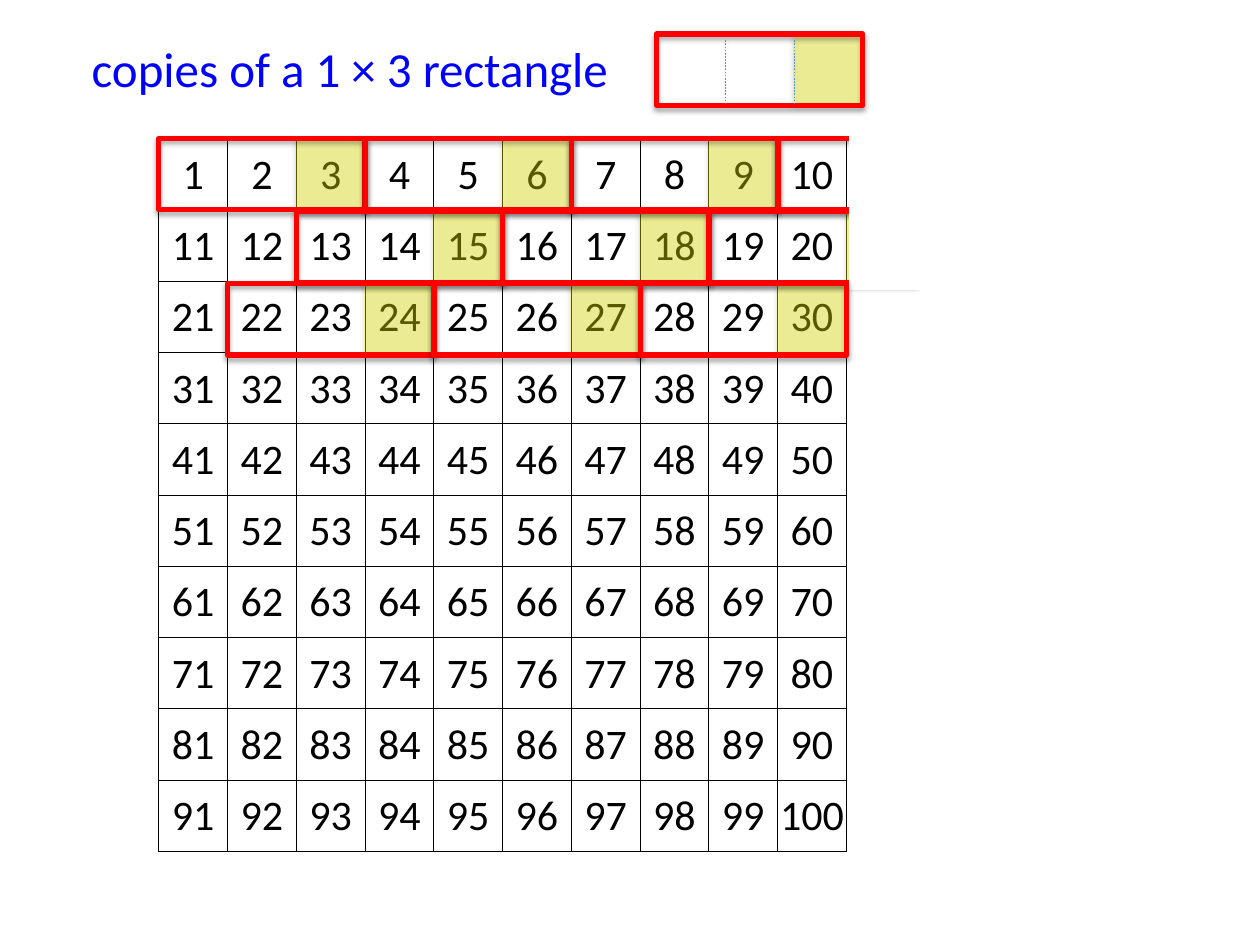
from lxml import etree
from pptx import Presentation
from pptx.dml.color import RGBColor
from pptx.enum.dml import MSO_LINE
from pptx.enum.shapes import MSO_CONNECTOR, MSO_SHAPE
from pptx.enum.text import MSO_ANCHOR, PP_ALIGN
from pptx.oxml import parse_xml
from pptx.oxml.ns import nsdecls, qn
from pptx.util import Inches, Pt

RECTANGLE = MSO_SHAPE.RECTANGLE
STRAIGHT = MSO_CONNECTOR.STRAIGHT
DASH = MSO_LINE.DASH
LEFT, CENTER = PP_ALIGN.LEFT, PP_ALIGN.CENTER
MIDDLE = MSO_ANCHOR.MIDDLE

COLORS = {"ink": "000000", "title": "0000FF", "outline": "FF0000",
          "highlight": "FFFF00", "divider": "558ED5", "paper": "FFFFFF"}
FONT = "Calibri"

# Number grid, in inches
SIZE = 10
GRID_LEFT, GRID_TOP = 1.26, 1.1
COL, ROW = 0.546, 0.566
TILE_COLS = 3
LAST_TILED = 30


def color(name):
    return RGBColor.from_string(COLORS[name])


def write(frame, text, size, ink="ink", align=LEFT):
    paragraph = frame.paragraphs[0]
    paragraph.alignment = align
    run = paragraph.add_run()
    run.text = text
    run.font.name = FONT
    run.font.size = Pt(size)
    run.font.color.rgb = color(ink)


def add_shadow(element, alpha, distance):
    element.spPr.append(parse_xml(
        f'<a:effectLst {nsdecls("a")}>'
        f'<a:outerShdw blurRad="{Pt(3.1)}" dist="{Pt(distance)}" dir="5400000" rotWithShape="0">'
        f'<a:srgbClr val="{COLORS["ink"]}"><a:alpha val="{alpha}000"/></a:srgbClr>'
        '</a:outerShdw></a:effectLst>'))


def add_box(shapes, left, top, width, height, fill=None, line=None, alpha=None, shadow=True):
    box = shapes.add_shape(RECTANGLE, Inches(left), Inches(top), Inches(width), Inches(height))
    if fill:
        box.fill.solid()
        box.fill.fore_color.rgb = color(fill)
    else:
        box.fill.background()
    if alpha:
        rgb = box.fill._xPr.find(".//" + qn("a:srgbClr"))
        etree.SubElement(rgb, qn("a:alpha"), val=f"{alpha}000")
    if line:
        box.line.color.rgb = color(line)
        box.line.width = Pt(3)
    else:
        box.line.fill.background()
    if shadow:
        add_shadow(box._element, 35, 1.8)
    else:
        box.shadow.inherit = False
    return box


def add_tile(slide, left, top):
    """A 1 × 3 rectangle with its last square highlighted."""
    tile = slide.shapes.add_group_shape()
    add_box(tile.shapes, left + (TILE_COLS - 1) * COL - 0.01, top, COL - 0.01, ROW,
            fill="highlight", alpha=34)
    add_box(tile.shapes, left, top, TILE_COLS * COL, ROW, line="outline")
    return tile


def add_divider(shapes, x, top, bottom):
    divider = shapes.add_connector(STRAIGHT, Inches(x), Inches(top), Inches(x), Inches(bottom))
    divider.line.color.rgb = color("divider")
    divider.line.width = Pt(0.25)
    divider.line.dash_style = DASH
    add_shadow(divider._element, 38, 1.6)


def set_borders(cell):
    properties = cell._tc.get_or_add_tcPr()
    for index, side in enumerate("LRTB"):
        properties.insert(index, parse_xml(
            f'<a:ln{side} {nsdecls("a")} w="{Pt(0.5)}"><a:solidFill>'
            f'<a:srgbClr val="{COLORS["ink"]}"/></a:solidFill></a:ln{side}>'))


def add_number_grid(slide):
    table = slide.shapes.add_table(SIZE, SIZE, Inches(GRID_LEFT), Inches(GRID_TOP),
                                   Inches(SIZE * COL), Inches(SIZE * ROW)).table
    table.first_row = table.horz_banding = False
    for column in table.columns:
        column.width = Inches(COL)
    for row in table.rows:
        row.height = Inches(ROW)
    for number, cell in enumerate(table.iter_cells(), start=1):
        cell.margin_left = cell.margin_right = cell.margin_top = Inches(0.01)
        cell.margin_bottom = 0
        cell.vertical_anchor = MIDDLE
        cell.fill.background()
        set_borders(cell)
        write(cell.text_frame, str(number), 24, align=CENTER)


def add_tiling(slide):
    grid_right = GRID_LEFT + SIZE * COL
    for number in range(1, LAST_TILED + 1, TILE_COLS):
        row, col = divmod(number - 1, SIZE)
        top = GRID_TOP + row * (ROW + 0.01)
        add_tile(slide, GRID_LEFT + col * COL, top)
        # Trim a tile that runs past the end of its row
        if col + TILE_COLS > SIZE:
            add_box(slide.shapes, grid_right + 0.02, top - 0.08, 1.23, ROW + 0.14,
                    fill="paper", shadow=False)


def add_heading(slide):
    heading = slide.shapes.add_textbox(Inches(0.63), Inches(0.26), Inches(4.46), Inches(0.57))
    heading.text_frame.word_wrap = True
    write(heading.text_frame, "copies of a 1 × 3 rectangle", 28, ink="title")
    # Sample tile beside the heading
    left, top = 5.21, 0.27
    sample = add_tile(slide, left, top)
    for square in range(1, TILE_COLS):
        add_divider(sample.shapes, left + square * COL, top + 0.05, top + ROW - 0.01)


def main():
    deck = Presentation()
    deck.slide_width, deck.slide_height = Inches(10), Inches(7.5)
    slide = deck.slides.add_slide(deck.slide_layouts[6])
    add_number_grid(slide)
    add_tiling(slide)
    add_heading(slide)
    deck.save("out.pptx")


if __name__ == "__main__":
    main()
